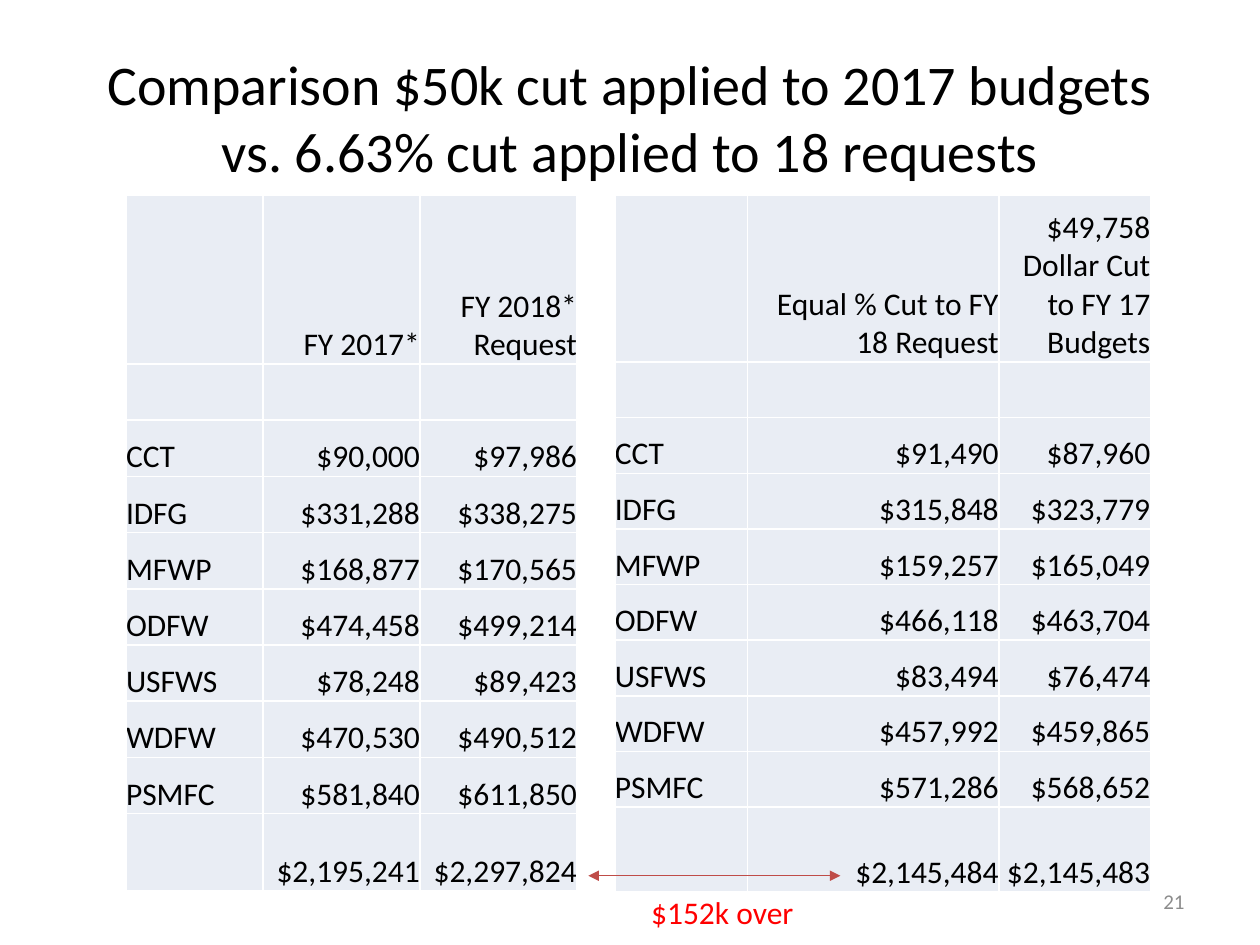
from dataclasses import dataclass

from lxml import etree
from pptx import Presentation
from pptx.dml.color import RGBColor
from pptx.enum.shapes import MSO_CONNECTOR
from pptx.enum.text import MSO_ANCHOR, MSO_AUTO_SIZE, PP_ALIGN
from pptx.oxml import parse_xml
from pptx.oxml.ns import nsdecls, qn
from pptx.util import Emu, Inches, Pt

LEFT, CENTER, RIGHT = PP_ALIGN.LEFT, PP_ALIGN.CENTER, PP_ALIGN.RIGHT
MIDDLE, BOTTOM = MSO_ANCHOR.MIDDLE, MSO_ANCHOR.BOTTOM
WIDTH, HEIGHT = Inches(10), Inches(7.5)
TITLE_ONLY = 5


@dataclass(frozen=True)
class Theme:
    font: str = "Calibri"
    ink: str = "000000"
    muted: str = "8C8C8C"
    alert: str = "FF0000"
    arrow: str = "BF4C48"
    cell: str = "E9EDF4"
    grid: str = "FFFFFF"
    title_size: int = 32
    body_size: int = 18
    number_size: int = 12


@dataclass(frozen=True)
class Area:
    """A rectangle in inches, read from a slide 10 wide and 7.5 high."""
    left: float
    top: float
    width: float
    height: float

    def emu(self) -> tuple[Emu, ...]:
        sides = (self.left / 10, self.top / 7.5, self.width / 10, self.height / 7.5)
        return tuple(Emu(round(share * full))
                     for share, full in zip(sides, (WIDTH, HEIGHT) * 2))


@dataclass(frozen=True)
class BudgetTable:
    area: Area
    column_weights: tuple[float, ...]
    total_weight: float  # height of the total row, in agency rows
    headings: tuple[str, str]
    amounts: tuple[tuple[int, int], ...]
    totals: tuple[int, int]


THEME = Theme()
HEADING_WEIGHT = 3
AGENCIES = ("CCT", "IDFG", "MFWP", "ODFW", "USFWS", "WDFW", "PSMFC")

CUTS = BudgetTable(
    Area(4.88, 1.55, 4.25, 5.53), (1.05, 1.99, 1.2), 1.53,
    ("Equal % Cut to FY 18 Request", "$49,758 Dollar Cut to FY 17 Budgets"),
    ((91490, 87960), (315848, 323779), (159257, 165049), (466118, 463704),
     (83494, 76474), (457992, 459865), (571286, 568652)),
    (2145484, 2145483))

REQUESTS = BudgetTable(
    Area(1, 1.55, 3.58, 5.52), (1.09, 1.25, 1.25), 1.37,
    ("FY 2017*", "FY 2018* Request"),
    ((90000, 97986), (331288, 338275), (168877, 170565), (474458, 499214),
     (78248, 89423), (470530, 490512), (581840, 611850)),
    (2195241, 2297824))


def write(frame, text: str, *, size: int = THEME.body_size,
          color: str = THEME.ink, align=LEFT) -> None:
    para = frame.paragraphs[0]
    para.alignment = align
    span = para.add_run()
    span.text = text
    span.font.name = THEME.font
    span.font.size = Pt(size)
    span.font.color.rgb = RGBColor.from_string(color)


def share_out(total: int, weights) -> list[Emu]:
    return [Emu(round(total * weight / sum(weights))) for weight in weights]


def style_cell(cell) -> None:
    cell.margin_left = cell.margin_right = cell.margin_top = cell.margin_bottom = 0
    cell.vertical_anchor = BOTTOM
    properties = cell._tc.get_or_add_tcPr()
    for side in ("lnL", "lnR", "lnT", "lnB"):
        properties.append(parse_xml(
            f'<a:{side} {nsdecls("a")} w="{Pt(1)}"><a:solidFill>'
            f'<a:srgbClr val="{THEME.grid}"/></a:solidFill></a:{side}>'))
    cell.fill.solid()
    cell.fill.fore_color.rgb = RGBColor.from_string(THEME.cell)


def draw_table(page, budget: BudgetTable) -> None:
    def dollars(pair):
        return [f"${amount:,}" for amount in pair]

    rows = [["", *budget.headings], ["", "", ""],
            *([agency, *dollars(pair)] for agency, pair in zip(AGENCIES, budget.amounts)),
            ["", *dollars(budget.totals)]]
    left, top, width, height = budget.area.emu()
    table = page.shapes.add_table(len(rows), 3, left, top, width, height).table
    table.first_row = table.horz_banding = False
    for column, size in zip(table.columns, share_out(width, budget.column_weights)):
        column.width = size
    weights = [HEADING_WEIGHT, *[1] * (len(AGENCIES) + 1), budget.total_weight]
    for row, size in zip(table.rows, share_out(height, weights)):
        row.height = size
    for r, texts in enumerate(rows):
        for c, text in enumerate(texts):
            cell = table.cell(r, c)
            style_cell(cell)
            if text:
                write(cell.text_frame, text, align=RIGHT if c else LEFT)


def draw_double_arrow(page, left: float, right: float, y: float) -> None:
    x, line_y, length, _ = Area(left, y, right - left, 0).emu()
    arrow = page.shapes.add_connector(MSO_CONNECTOR.STRAIGHT, x, line_y, x + length, line_y)
    arrow.line.width = Pt(0.75)
    arrow.line.color.rgb = RGBColor.from_string(THEME.arrow)
    line = arrow.line._get_or_add_ln()
    for end in ("a:headEnd", "a:tailEnd"):
        etree.SubElement(line, qn(end), type="triangle")
    etree.SubElement(arrow._element.spPr, qn("a:effectLst"))


def main() -> None:
    deck = Presentation()
    deck.slide_width, deck.slide_height = WIDTH, HEIGHT
    page = deck.slides.add_slide(deck.slide_layouts[TITLE_ONLY])

    # Title
    title = page.shapes.title
    title.left, title.top, title.width, title.height = Area(0.5, 0.3, 9, 1.25).emu()
    title.text_frame.vertical_anchor = MIDDLE
    write(title.text_frame,
          "Comparison $50k cut applied to 2017 budgets vs. 6.63% cut applied to 18 requests",
          size=THEME.title_size, align=CENTER)

    # Page number
    number = page.shapes.add_textbox(*Area(7.17, 6.95, 2.33, 0.4).emu()).text_frame
    number.word_wrap = True
    number.vertical_anchor = MIDDLE
    write(number, "21", size=THEME.number_size, color=THEME.muted, align=RIGHT)

    # Budget tables
    for budget in (CUTS, REQUESTS):
        draw_table(page, budget)

    # Gap between the request and the cut totals
    draw_double_arrow(page, 4.67, 6.67, 6.95)
    gap = page.shapes.add_textbox(*Area(5.07, 7.04, 1.34, 0.4).emu()).text_frame
    gap.word_wrap = False
    gap.auto_size = MSO_AUTO_SIZE.SHAPE_TO_FIT_TEXT
    write(gap, "$152k over", color=THEME.alert)

    deck.save("out.pptx")


if __name__ == "__main__":
    main()
